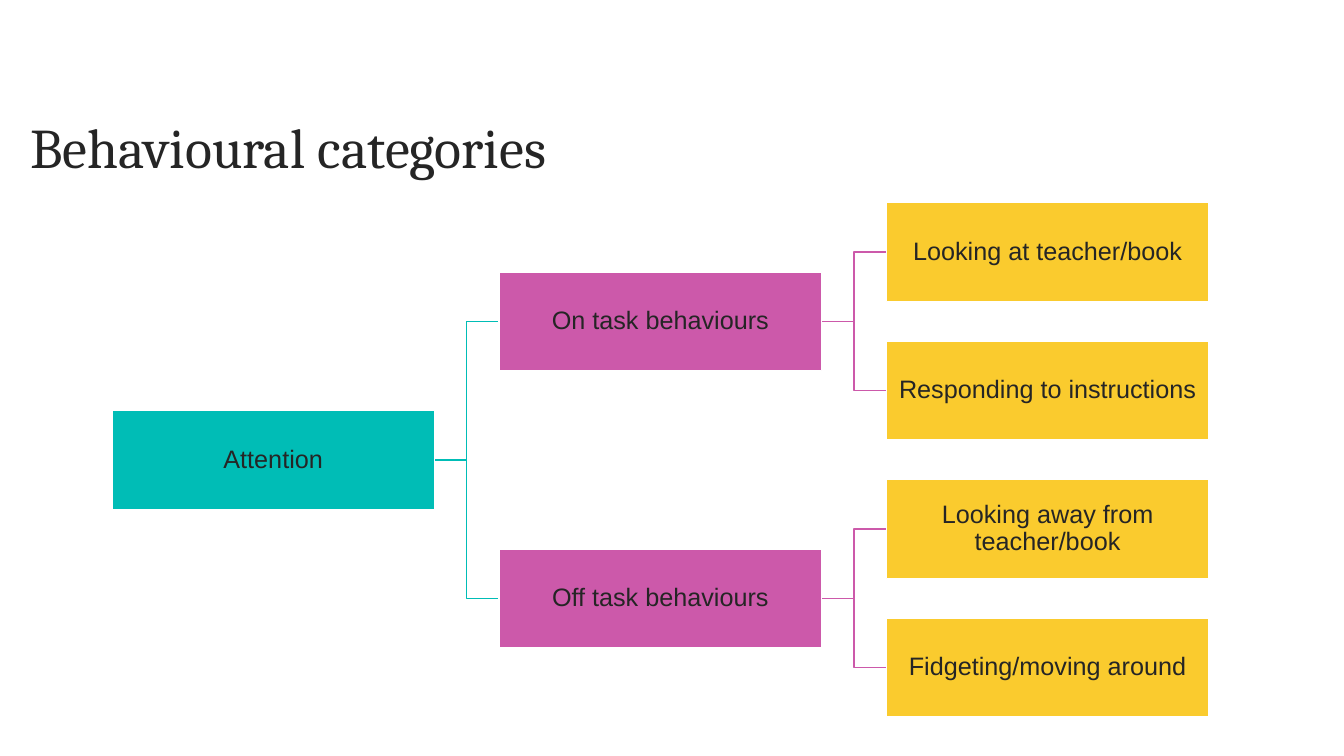
"""Build the behavioural categories slide with its left-to-right tree."""
from pptx import Presentation
from pptx.dml.color import RGBColor
from pptx.enum import shapes, text
from pptx.util import Inches, Pt

WHITE = RGBColor(0xFF, 0xFF, 0xFF)
INK = RGBColor(0x25, 0x25, 0x25)
TEAL = RGBColor(0x00, 0xBD, 0xB6)
PINK = RGBColor(0xCC, 0x59, 0xAA)
YELLOW = RGBColor(0xFA, 0xCB, 0x2E)

LEVEL_COLORS = [TEAL, PINK, YELLOW]
BOX_WIDTH, BOX_HEIGHT = 3.2, 0.98
LEVEL_GAP = 0.64
FIRST_LEFT, FIRST_CENTER, ROW_STEP = 1.11, 2.5, 1.375

# label: (level, row, parent)
CATEGORIES = {
    "Attention": (0, 1.5, None),
    "On task behaviours": (1, 0.5, "Attention"),
    "Looking at teacher/book": (2, 0, "On task behaviours"),
    "Responding to instructions": (2, 1, "On task behaviours"),
    "Off task behaviours": (1, 2.5, "Attention"),
    "Looking away from teacher/book": (2, 2, "Off task behaviours"),
    "Fidgeting/moving around": (2, 3, "Off task behaviours"),
}


def box_anchor(label):
    level, row, _ = CATEGORIES[label]
    return FIRST_LEFT + level * (BOX_WIDTH + LEVEL_GAP), FIRST_CENTER + row * ROW_STEP


presentation = Presentation()
presentation.slide_width = Inches(13.33)
presentation.slide_height = Inches(7.5)
slide = presentation.slides.add_slide(presentation.slide_layouts[5])

title = slide.shapes.title
title.left, title.top = Inches(0.2), Inches(1.1)
title.width, title.height = Inches(12.72), Inches(0.79)
title.text_frame.text = "Behavioural categories"
title.text_frame.vertical_anchor = text.MSO_ANCHOR.MIDDLE
paragraph = title.text_frame.paragraphs[0]
paragraph.alignment = text.PP_ALIGN.LEFT
paragraph.line_spacing = 0.9
paragraph.font.name = "Cambria"
paragraph.font.size = Pt(40)
paragraph.font.color.rgb = INK

for label, (level, row, parent) in CATEGORIES.items():
    if parent is None:
        continue
    child_left, child_center = box_anchor(label)
    parent_left, parent_center = box_anchor(parent)
    middle = child_left - LEVEL_GAP / 2
    builder = slide.shapes.build_freeform(
        Inches(parent_left + BOX_WIDTH), Inches(parent_center))
    builder.add_line_segments(
        [(Inches(middle), Inches(parent_center)),
         (Inches(middle), Inches(child_center)),
         (Inches(child_left), Inches(child_center))], close=False)
    branch = builder.convert_to_shape()
    branch.shadow.inherit = False
    branch.fill.background()
    branch.line.color.rgb = LEVEL_COLORS[level - 1]
    branch.line.width = Pt(1)

for label, (level, row, parent) in CATEGORIES.items():
    left, center = box_anchor(label)
    box = slide.shapes.add_shape(
        shapes.MSO_SHAPE.RECTANGLE, Inches(left), Inches(center - BOX_HEIGHT / 2),
        Inches(BOX_WIDTH), Inches(BOX_HEIGHT))
    box.shadow.inherit = False
    box.fill.solid()
    box.fill.fore_color.rgb = LEVEL_COLORS[level]
    box.line.color.rgb = WHITE
    box.line.width = Pt(1)
    frame = box.text_frame
    frame.word_wrap = True
    frame.vertical_anchor = text.MSO_ANCHOR.MIDDLE
    frame.margin_left = frame.margin_right = Inches(0.01)
    frame.margin_top = frame.margin_bottom = Inches(0.01)
    frame.text = label
    paragraph = frame.paragraphs[0]
    paragraph.alignment = text.PP_ALIGN.CENTER
    paragraph.line_spacing = 0.9
    paragraph.font.name = "Arial"
    paragraph.font.size = Pt(18)
    paragraph.font.color.rgb = INK

presentation.save("out.pptx")
